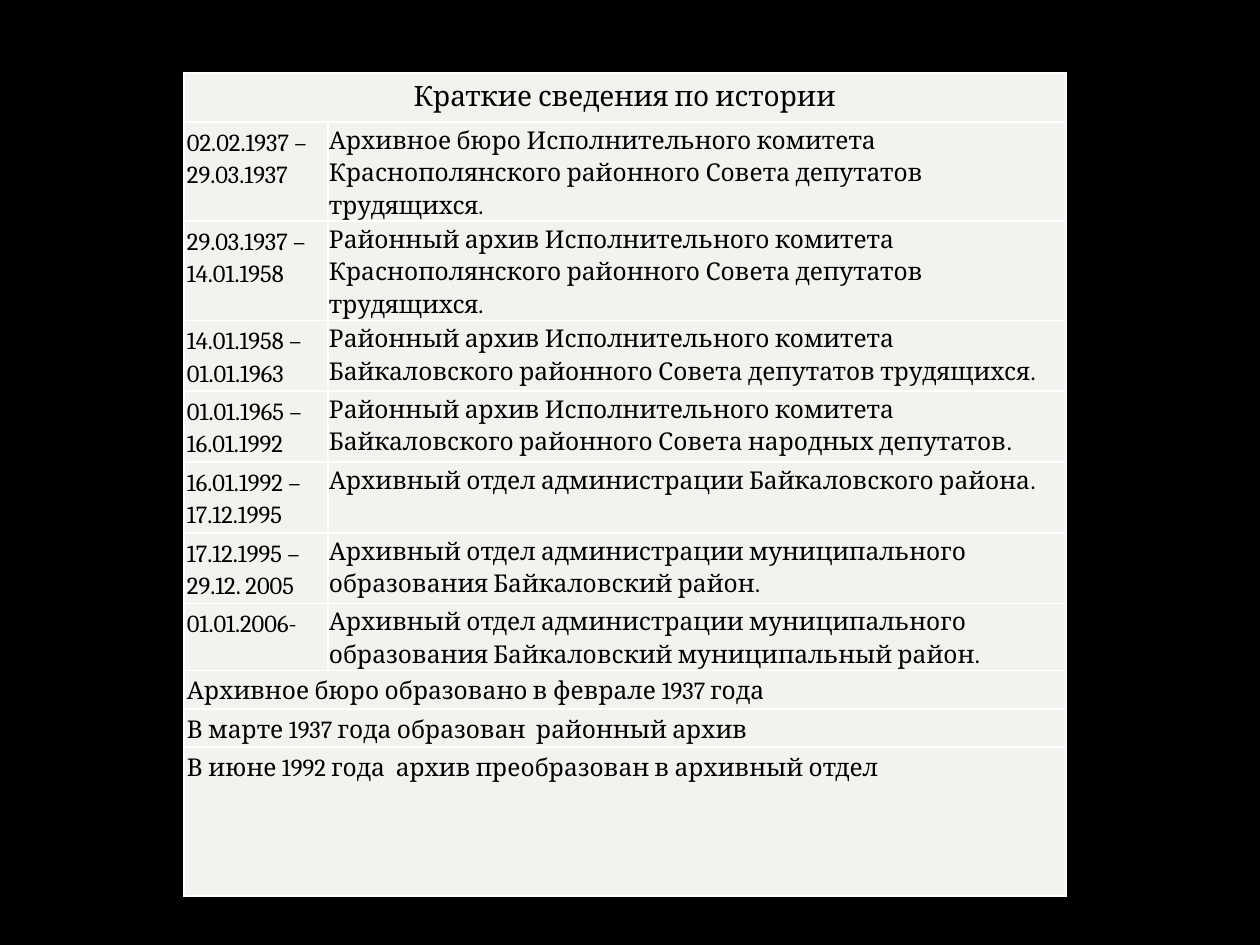
"""Build a slide with a table on the history of a district archive."""
from pptx import Presentation
from pptx import util as u
from pptx.dml.color import RGBColor
from pptx.enum import text
from pptx.oxml import parse_xml
from pptx.oxml.ns import nsdecls

PX = 914400 // 126
FONT, INK, PAPER, EDGE = "Cambria", "000000", "F0F3EE", "FFFFFF"
TITLE = "Краткие сведения по истории"
COUNCIL = "Исполнительного комитета Краснополянского районного Совета депутатов трудящихся."
EVENTS = [
    ("02.02.1937 – 29.03.1937", "Архивное бюро " + COUNCIL),
    ("29.03.1937 – 14.01.1958", "Районный архив " + COUNCIL),
    ("14.01.1958 – 01.01.1963",
     "Районный архив Исполнительного комитета Байкаловского районного Совета депутатов трудящихся."),
    ("01.01.1965 – 16.01.1992",
     "Районный архив Исполнительного комитета Байкаловского районного Совета народных депутатов."),
    ("16.01.1992 – 17.12.1995", "Архивный отдел администрации Байкаловского района."),
    ("17.12.1995 –\n29.12. 2005",
     "Архивный отдел администрации муниципального образования Байкаловский район."),
    ("01.01.2006-",
     "Архивный отдел администрации муниципального образования Байкаловский муниципальный район."),
]
NOTES = [
    "Архивное бюро образовано в феврале 1937 года",
    "В марте 1937 года образован  районный архив",
    "В июне 1992 года  архив преобразован в архивный отдел",
]
COLS = [144, 738]
ROWS = [49] + [62] * 6 + [60, 33, 33, 149]


def px(n):
    return u.Emu(n * PX)


def color(code):
    return RGBColor.from_string(code)


def style(cell, pad):
    cell.margin_left = cell.margin_right = px(pad)
    cell.margin_top = cell.margin_bottom = px(pad)
    props = cell._tc.get_or_add_tcPr()
    for side in ("lnL", "lnR", "lnT", "lnB"):
        props.append(parse_xml(
            f'<a:{side} {nsdecls("a")} w="12700"><a:solidFill>'
            f'<a:srgbClr val="{EDGE}"/></a:solidFill></a:{side}>'))
    cell.fill.solid()
    cell.fill.fore_color.rgb = color(PAPER)


def write(cell, words, size=14, align=text.PP_ALIGN.LEFT):
    frame = cell.text_frame
    for i, line in enumerate(words.split("\n")):
        para = frame.add_paragraph() if i else frame.paragraphs[0]
        para.alignment, para.line_spacing = align, 1.15
        run = para.add_run()
        run.text = line
        run.font.name, run.font.size = FONT, u.Pt(size)
        run.font.bold = False
        run.font.color.rgb = color(INK)


def main():
    deck = Presentation()
    deck.slide_width, deck.slide_height = px(1260), px(945)
    slide = deck.slides.add_slide(deck.slide_layouts[6])
    slide.background.fill.solid()
    slide.background.fill.fore_color.rgb = color("000000")

    frame = slide.shapes.add_table(
        len(ROWS), len(COLS), px(184), px(73), px(sum(COLS)), px(780))
    table = frame.table
    table.first_row = table.horz_banding = False
    for col, width in zip(table.columns, COLS):
        col.width = px(width)
    for row, height in zip(table.rows, ROWS):
        row.height = px(height)
        for cell, pad in zip(row.cells, (3, 1)):
            style(cell, pad)
    frame.height = px(780)

    wide = [0] + list(range(len(EVENTS) + 1, len(ROWS)))
    for r in wide:
        table.cell(r, 0).merge(table.cell(r, 1))
    write(table.cell(0, 0), TITLE, 16, text.PP_ALIGN.CENTER)
    for r, pair in enumerate(EVENTS, 1):
        for c, words in enumerate(pair):
            write(table.cell(r, c), words)
    for r, words in zip(wide[1:], NOTES):
        write(table.cell(r, 0), words)
    deck.save("out.pptx")


if __name__ == "__main__":
    main()
